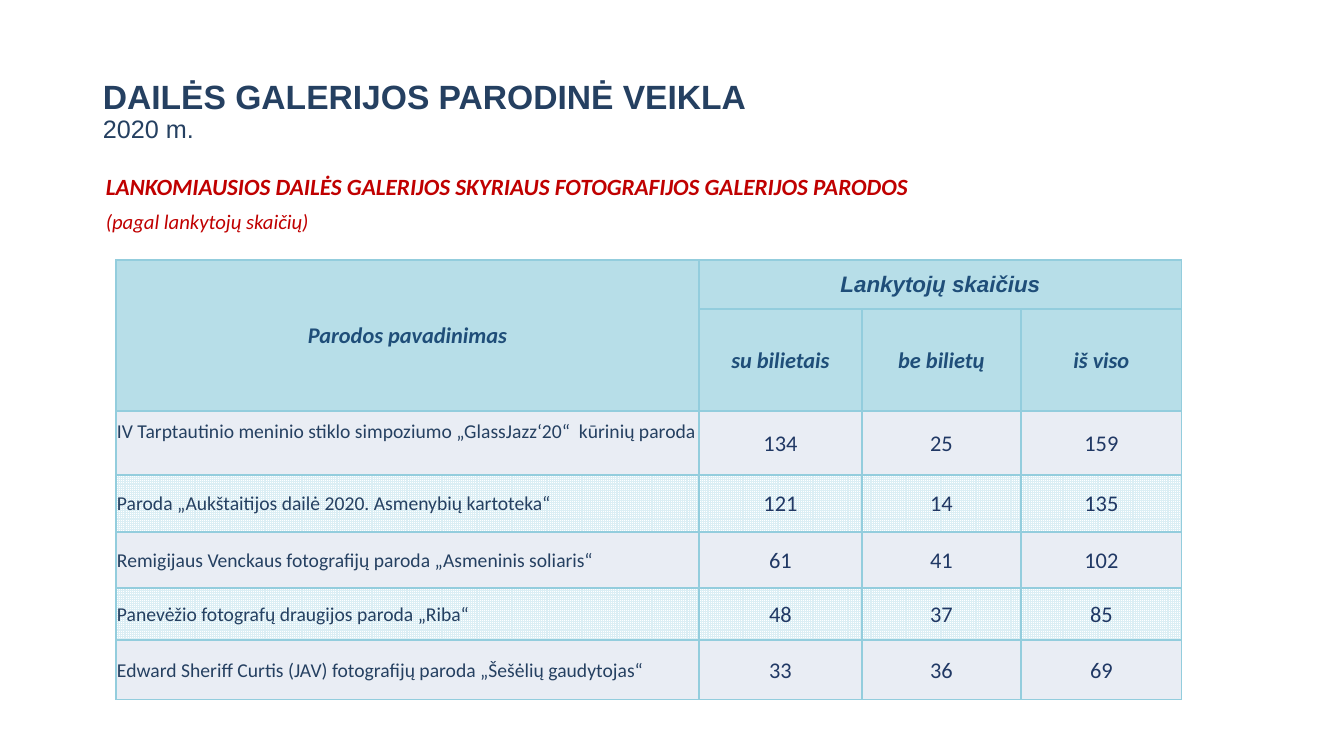
from lxml import etree
from pptx import Presentation
from pptx import util as u
from pptx.dml.color import RGBColor
from pptx.enum import dml, text
from pptx.oxml import ns

# Content
TITLE = "DAILĖS GALERIJOS PARODINĖ VEIKLA"
YEAR = "2020 m."
SUBTITLE = "LANKOMIAUSIOS DAILĖS GALERIJOS SKYRIAUS FOTOGRAFIJOS GALERIJOS PARODOS"
SUBTITLE_NOTE = "(pagal lankytojų skaičių)"
NAME_HEADER = "Parodos pavadinimas"
VISITORS_HEADER = "Lankytojų skaičius"
COUNT_HEADERS = ["su bilietais", "be bilietų", "iš viso"]
EXHIBITIONS = [
    ("IV Tarptautinio meninio stiklo simpoziumo „GlassJazz‘20“  kūrinių paroda", 134, 25, 159),
    ("Paroda „Aukštaitijos dailė 2020. Asmenybių kartoteka“", 121, 14, 135),
    ("Remigijaus Venckaus fotografijų paroda „Asmeninis soliaris“", 61, 41, 102),
    ("Panevėžio fotografų draugijos paroda „Riba“", 48, 37, 85),
    ("Edward Sheriff Curtis (JAV) fotografijų paroda „Šešėlių gaudytojas“", 33, 36, 69),
]

# Layout in px
TITLE_BOX = (93, 50, 1188, 99)
SUBTITLE_BOX = (96, 175, 1180, 67)
TABLE_LEFT, TABLE_TOP = 116, 260
COLUMNS = [583, 163, 159, 161]
ROWS = [49, 102, 64, 57, 56, 52, 60]
FIRST_NAME_LIFT = 23

NAVY = RGBColor(0x25, 0x40, 0x61)
COUNT_BLUE = RGBColor(0x20, 0x38, 0x64)
HEADER_BLUE = RGBColor(0x1F, 0x4E, 0x79)
RED = RGBColor(0xC0, 0x00, 0x00)
HEADER_FILL = RGBColor(0xB7, 0xDE, 0xE8)
PLAIN_FILL = RGBColor(0xE9, 0xED, 0xF4)
GRID_FILL = RGBColor(0xDB, 0xEE, 0xF4)
WHITE = RGBColor(0xFF, 0xFF, 0xFF)
BORDER = RGBColor(0x93, 0xCD, 0xDD)


def px(length):
    return u.Emu(round(length * 914400 / 100.8))


def style(span, size, color, font="Calibri", bold=False, italic=False):
    span.font.name = font
    span.font.size = u.Pt(size)
    span.font.color.rgb = color
    span.font.bold = bold
    span.font.italic = italic


def add_text(page, place, content):
    box = page.shapes.add_textbox(*map(px, place))
    box.text_frame.word_wrap = True
    box.text_frame.text = content
    return box.text_frame


def add_borders(cell):
    properties = cell._tc.get_or_add_tcPr()
    for index, side in enumerate(("lnL", "lnR", "lnT", "lnB")):
        line = etree.Element(ns.qn(f"a:{side}"), w=str(u.Pt(1)))
        fill = etree.SubElement(line, ns.qn("a:solidFill"))
        etree.SubElement(fill, ns.qn("a:srgbClr"), val=str(BORDER))
        properties.insert(index, line)


def fill_cell(cell, row):
    if row > 1 and row % 2:
        cell.fill.patterned()
        cell.fill.pattern = dml.MSO_PATTERN.SMALL_GRID
        cell.fill.fore_color.rgb = GRID_FILL
        cell.fill.back_color.rgb = WHITE
    else:
        cell.fill.solid()
        cell.fill.fore_color.rgb = PLAIN_FILL if row > 1 else HEADER_FILL


def add_exhibition_table(page):
    frame = page.shapes.add_table(len(ROWS), len(COLUMNS), px(TABLE_LEFT), px(TABLE_TOP),
                                  px(sum(COLUMNS)), px(sum(ROWS)))
    table = frame.table
    for column, width in zip(table.columns, COLUMNS):
        column.width = px(width)
    for line, height in zip(table.rows, ROWS):
        line.height = px(height)

    grid = [(NAME_HEADER, VISITORS_HEADER, "", ""), ("", *COUNT_HEADERS), *EXHIBITIONS]
    for row, values in enumerate(grid):
        for column, value in enumerate(values):
            cell = table.cell(row, column)
            cell.margin_left = cell.margin_right = cell.margin_top = px(1)
            cell.margin_bottom = 0
            cell.vertical_anchor = text.MSO_ANCHOR.MIDDLE
            fill_cell(cell, row)
            add_borders(cell)
            cell.text_frame.text = str(value)
            para = cell.text_frame.paragraphs[0]
            is_name = row > 1 and column == 0
            para.alignment = text.PP_ALIGN.LEFT if is_name else text.PP_ALIGN.CENTER
            for span in para.runs:
                if row < 2:
                    font = "Arial" if value == VISITORS_HEADER else "Calibri"
                    style(span, 16, HEADER_BLUE, font, bold=True, italic=True)
                elif is_name:
                    style(span, 14, NAVY)
                else:
                    style(span, 16, COUNT_BLUE)

    table.cell(2, 0).margin_bottom = px(FIRST_NAME_LIFT)
    table.cell(0, 0).merge(table.cell(1, 0))
    table.cell(0, 1).merge(table.cell(0, 3))


def main():
    deck = Presentation()
    deck.slide_width, deck.slide_height = px(1344), px(756)
    page = deck.slides.add_slide(deck.slide_layouts[6])

    # Title and year
    heading = add_text(page, TITLE_BOX, f"{TITLE}\v{YEAR}")
    heading.vertical_anchor = text.MSO_ANCHOR.BOTTOM
    para = heading.paragraphs[0]
    para.line_spacing = 0.9
    style(para.runs[0], 24, NAVY, "Arial", bold=True)
    style(para.runs[1], 18, NAVY, "Arial")

    # Subtitle
    subtitle = add_text(page, SUBTITLE_BOX, f"{SUBTITLE}\n{SUBTITLE_NOTE}")
    first, note = subtitle.paragraphs
    first.line_spacing = 0.7
    note.line_spacing = 0.8
    note.space_before = u.Pt(10)
    style(first.runs[0], 16.6, RED, bold=True, italic=True)
    style(note.runs[0], 14.8, RED, italic=True)

    # Visitor table
    add_exhibition_table(page)
    deck.save("out.pptx")


if __name__ == "__main__":
    main()
